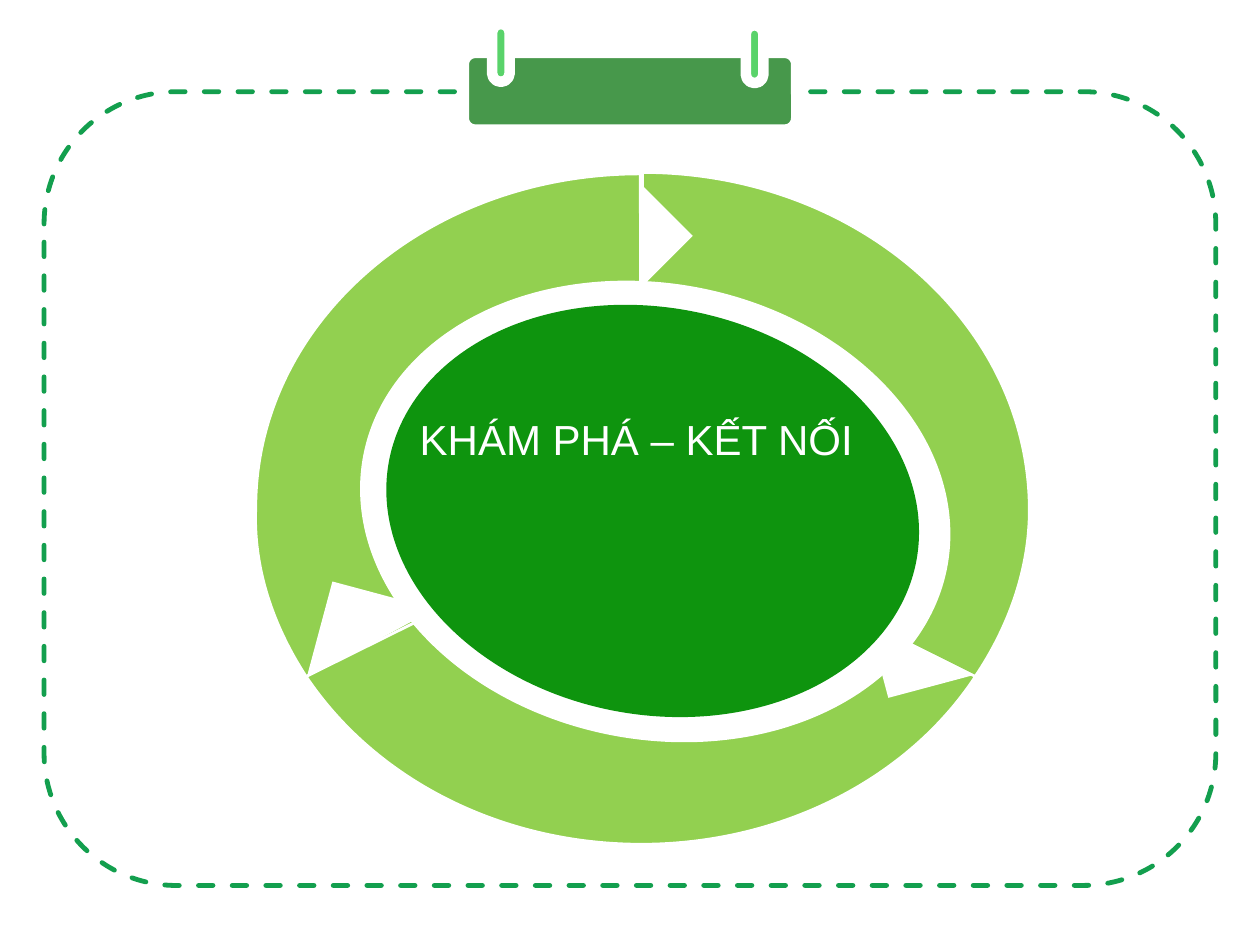
from dataclasses import dataclass

from lxml import etree
from pptx import Presentation
from pptx.dml.color import RGBColor
from pptx.enum import dml, shapes, text
from pptx.oxml import ns
from pptx.util import Pt


@dataclass(frozen=True)
class Theme:
    white: str = "FFFFFF"
    frame: str = "139F4E"
    clip: str = "47984B"
    pin: str = "59D36A"
    ring: str = "92D050"
    core: str = "0E940E"
    font: str = "Arial"
    size: int = 24


theme = Theme()
kind = shapes.MSO_SHAPE

deck = Presentation()
deck.slide_width, deck.slide_height = Pt(720), Pt(540)
slide = deck.slides.add_slide(deck.slide_layouts[5])
tree = slide.shapes


def paint(shape, fill=None, line=None, width=0, turn=0, round=None):
    """Set fill, outline, rotation and corner radius, and drop the shadow."""
    shape.shadow.inherit = False
    shape.rotation = turn
    if round is not None:
        shape.adjustments[0] = round
    for part, color in ((shape.fill, fill), (shape.line.fill, line)):
        if color:
            part.solid()
            part.fore_color.rgb = RGBColor.from_string(color)
        else:
            part.background()
    if line:
        shape.line.width = Pt(width)
    return shape


def write(shape, words, font, size, color):
    frame = shape.text_frame
    frame.auto_size = text.MSO_AUTO_SIZE.NONE
    frame.word_wrap = False
    frame.margin_left = frame.margin_right = 0
    frame.vertical_anchor = text.MSO_ANCHOR.TOP
    line = frame.paragraphs[0]
    line.alignment = text.PP_ALIGN.CENTER
    run = line.add_run()
    run.text = words
    run.font.name, run.font.size = font, Pt(size)
    run.font.color.rgb = RGBColor.from_string(color)


# Dashed frame
border = paint(tree.add_shape(kind.ROUNDED_RECTANGLE, Pt(25.2), Pt(52.4), Pt(669.6), Pt(453.6)),
               line=theme.frame, width=2.75)
border.line.dash_style = dml.MSO_LINE.DASH
border.line._get_or_add_ln().set("cap", "rnd")

# Clip and its two pins
for left, top, wide, high, color, curve in (
    (265, 30.2, 190, 43.9, theme.clip, 0.15),
    (281.2, 13.7, 10.1, 33.1, theme.pin, 0.5),
    (426.2, 14.4, 10.1, 33.1, theme.pin, 0.5),
):
    part = tree.add_shape(kind.ROUNDED_RECTANGLE, Pt(left), Pt(top), Pt(wide), Pt(high))
    paint(part, color, theme.white, 6, round=curve)

# Ring: each sector is a hub, a start and two Bézier curves, then a notch
# given as left, top, width, height and rotation
sectors = (
    ((367.2, 291.6), (557.3, 386.6),
     (((576.7, 357.8), (588.2, 324.7), (588.2, 291.6)),
      ((588.2, 184.3), (488.9, 98.6), (367.2, 98.6))),
     (339.8, 111.6, 47.5, 43.9, 225)),
    ((366.5, 291.6), (365.8, 99.4),
     (((244.1, 99.4), (146.2, 184.3), (146.2, 290.2)),
      ((144.7, 324.7), (156.2, 357.8), (175, 386.6))),
     (182.9, 337.7, 57.6, 60.5, 105)),
    ((366.5, 291.6), (175, 386.6),
     (((214.6, 445.7), (286.6, 482.4), (366.5, 482.4)),
      ((445.7, 482.4), (518.4, 445.7), (557.3, 386.6))),
     (501.1, 349.2, 49.7, 43.9, 345)),
)
for hub, start, curves, (left, top, wide, high, turn) in sectors:
    grid = [(x * 10, y * 10) for x, y in (start, *curves[0], *curves[1], hub)]
    pen = tree.build_freeform(*grid[0], scale=Pt(1) / 10)
    pen.add_line_segments(grid[1:], close=True)
    sector = paint(pen.convert_to_shape(), theme.ring, theme.white, 1.5)
    # Join the three points of each curve into one Bézier segment
    lines = list(sector._element.iter(ns.qn("a:lnTo")))
    for trio in (lines[:3], lines[3:6]):
        bend = etree.Element(ns.qn("a:cubicBezTo"))
        trio[0].addprevious(bend)
        for line in trio:
            bend.append(line[0])
            line.getparent().remove(line)
    notch = tree.add_shape(kind.RIGHT_TRIANGLE, Pt(left), Pt(top), Pt(wide), Pt(high))
    paint(notch, theme.white, turn=turn)

# Tilted core on a white rim
for left, top, wide, high, color in (
    (204.5, 162, 339.8, 260.6, theme.white),
    (219.6, 175.7, 306.7, 232.6, theme.core),
):
    oval = tree.add_shape(kind.OVAL, Pt(left), Pt(top), Pt(wide), Pt(high))
    paint(oval, color, turn=10.8)

# Title, brought to the front
title = tree.title
title.left, title.top, title.width, title.height = Pt(236.2), Pt(232.6), Pt(254.9), Pt(90)
write(title, "KHÁM PHÁ – KẾT NỐI", font=theme.font, size=theme.size, color=theme.white)
tree._spTree.append(title._element)

deck.save("out.pptx")
